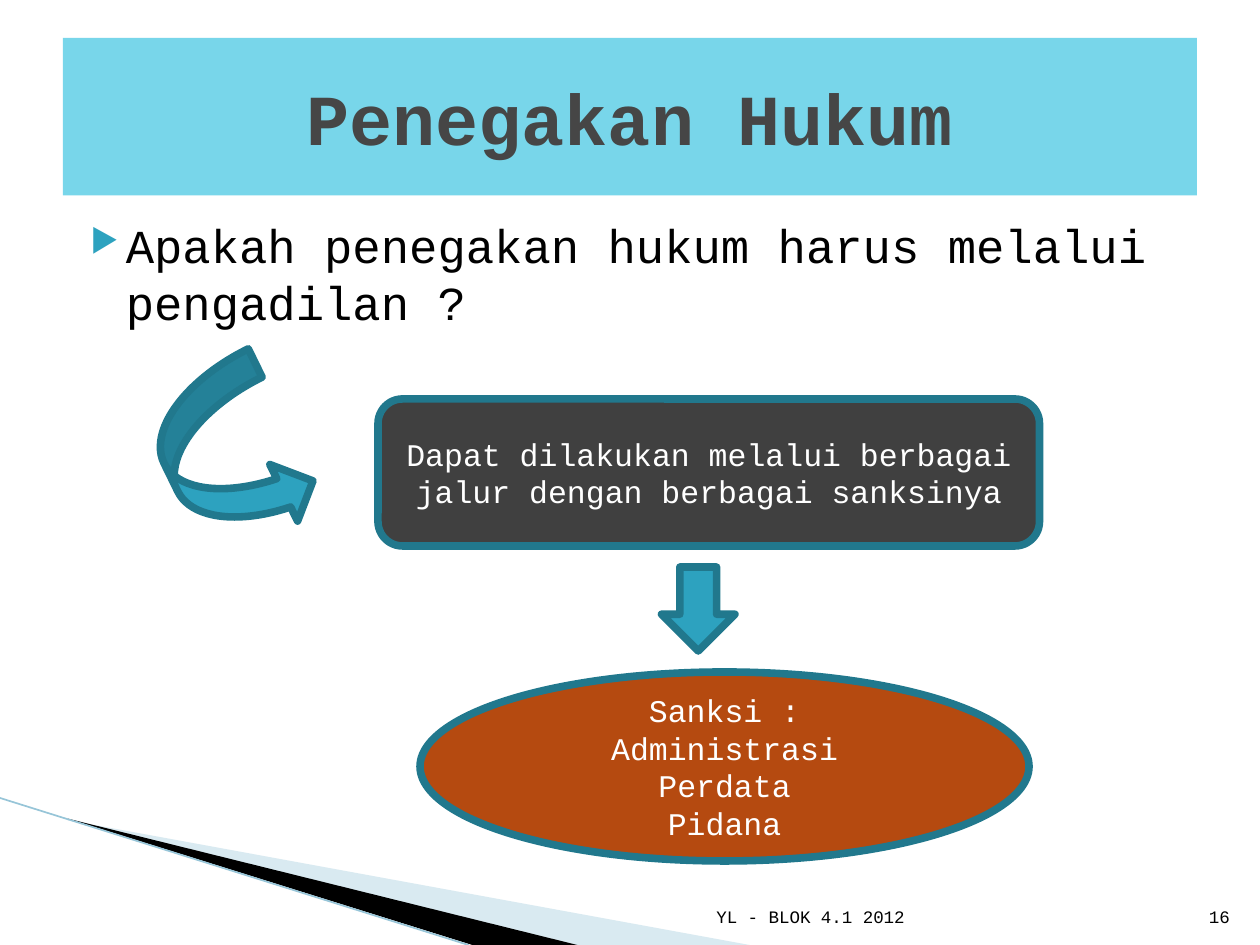
"""Build the slide about law enforcement and its sanctions."""
from lxml import etree
from pptx import Presentation, util as u
from pptx.dml.color import RGBColor
from pptx.enum import shapes, text
from pptx.oxml.ns import qn

COLORS = dict(banner="78D6EA", title="464646", teal="2DA2BF", edge="21788D",
              dark="404040", rust="B54A10", pale="A0CBDC", rule="97C5D8",
              black="000000", white="FFFFFF")
CELL = u.Inches(1) / 12
KIND = shapes.MSO_SHAPE
ALIGN = text.PP_ALIGN
ANCHOR = text.MSO_ANCHOR


def grid(*cells):
    """Turn grid columns and rows into lengths."""
    return [u.Emu(round(cell * CELL)) for cell in cells]


def set_all(target, values):
    """Set every attribute in a dict of format values."""
    for name, value in values.items():
        setattr(target, name, value)


def paint(shape, fill, edge=None):
    """Fill a shape and give it an outline or none."""
    shape.shadow.inherit = False
    shape.fill.solid()
    shape.fill.fore_color.rgb = RGBColor.from_string(COLORS[fill])
    if edge:
        shape.line.color.rgb = RGBColor.from_string(COLORS[edge])
        shape.line.width = u.Pt(4.33)
    else:
        shape.line.fill.background()


def write(shape, lines, size, color, align=ALIGN.CENTER, anchor=ANCHOR.MIDDLE, bold=False):
    """Write one paragraph per line in a shape."""
    frame = shape.text_frame
    set_all(frame, dict(word_wrap=True, vertical_anchor=anchor))
    for index, line in enumerate(lines):
        para = frame.add_paragraph() if index else frame.paragraphs[0]
        para.alignment = align
        span = para.add_run()
        span.text = line
        set_all(span.font, dict(name="Courier New", size=u.Pt(size), bold=bold))
        span.font.color.rgb = RGBColor.from_string(COLORS[color])
    return frame


def add_block(page, kind, box, fill, edge=None):
    """Add a painted preset shape on the grid."""
    shape = page.shapes.add_shape(kind, *grid(*box))
    paint(shape, fill, edge)
    return shape


def add_corner(page, box):
    """Draw the two wedges and the rule in the lower left corner."""
    left, top, width, height = box
    wedges = [("pale", [(0.09, 0.15), (1, 1), (0.77, 1)]),
              ("black", [(0.09, 0.14), (0.77, 1), (0.63, 1)])]
    for fill, shares in wedges:
        points = [grid(left + x * width, top + y * height) for x, y in shares]
        outline = page.shapes.build_freeform(*points[0])
        outline.add_line_segments(points[1:])
        wedge = outline.convert_to_shape()
        paint(wedge, fill)
        if fill == "pale":
            color = wedge.fill._xPr.find(".//" + qn("a:srgbClr"))
            etree.SubElement(color, qn("a:alpha"), val="40000")
    rule = page.shapes.add_connector(
        shapes.MSO_CONNECTOR.STRAIGHT,
        *grid(left, top, left + 0.625 * width, top + height))
    rule.line.color.rgb = RGBColor.from_string(COLORS["rule"])
    rule.line.width = u.Pt(0.95)
    etree.SubElement(rule._element.spPr, qn("a:effectLst"))


def add_title(page, box):
    """Add the title banner."""
    banner = add_block(page, KIND.RECTANGLE, box, "banner")
    write(banner, ["Penegakan Hukum"], 41, "title", bold=True)


def add_question(page, box):
    """Add the bulleted question."""
    area = page.shapes.add_textbox(*grid(*box))
    frame = write(area, ["Apakah penegakan hukum harus melalui pengadilan ?"],
                  27, "black", ALIGN.LEFT, ANCHOR.TOP)
    frame.margin_top = u.Inches(0.1)
    props = frame.paragraphs[0]._p.get_or_add_pPr()
    props.set("marL", str(u.Inches(0.4)))
    props.set("indent", str(u.Inches(-0.28)))
    tint = etree.SubElement(props, qn("a:buClr"))
    etree.SubElement(tint, qn("a:srgbClr"), val=COLORS["teal"])
    etree.SubElement(props, qn("a:buSzPct"), val="68000")
    etree.SubElement(props, qn("a:buChar"), char="▶")


def add_flow(page, box):
    """Add the answer, the sanctions and the arrows that lead to them."""
    left, top, width, height = box
    parts = [
        (KIND.ROUNDED_RECTANGLE, (20, 3, 63, 14), "dark", 0,
         ["Dapat dilakukan melalui berbagai jalur dengan berbagai sanksinya"]),
        (KIND.OVAL, (24, 29, 58, 18), "rust", 0,
         ["Sanksi :", "Administrasi", "Perdata", "Pidana"]),
        (KIND.CURVED_RIGHT_ARROW, (0, 0, 12, 17), "teal", 333.9, []),
        (KIND.DOWN_ARROW, (47, 19, 7, 8), "teal", 0, []),
    ]
    across, down = width / 83, height / 47
    for kind, (x, y, wide, high), fill, turn, lines in parts:
        place = left + x * across, top + y * down, wide * across, high * down
        shape = add_block(page, kind, place, fill, "edge")
        shape.rotation = turn
        if lines:
            write(shape, lines, 18, "white")


def add_footer(page, box):
    """Add the footer label and the page number."""
    left, top, width, height = box
    for label, start, share in [("YL - BLOK 4.1 2012 ", 0, 0.507), ("16", 0.921, 0.079)]:
        area = page.shapes.add_textbox(
            *grid(left + start * width, top, share * width, height))
        write(area, [label], 10, "black", ALIGN.RIGHT, ANCHOR.BOTTOM)


def main():
    """Build and save the deck."""
    deck = Presentation()
    set_all(deck, dict(slide_width=u.Inches(10), slide_height=u.Inches(7.5)))
    page = deck.slides.add_slide(deck.slide_layouts[6])
    add_corner(page, (0, 76, 71.4, 14))
    add_title(page, (6, 3.6, 108, 15))
    add_question(page, (6, 19.4, 108, 59.4))
    add_footer(page, (57.5, 84.1, 60.8, 4.8))
    add_flow(page, (16, 35, 83, 47))
    deck.save("out.pptx")


if __name__ == "__main__":
    main()
